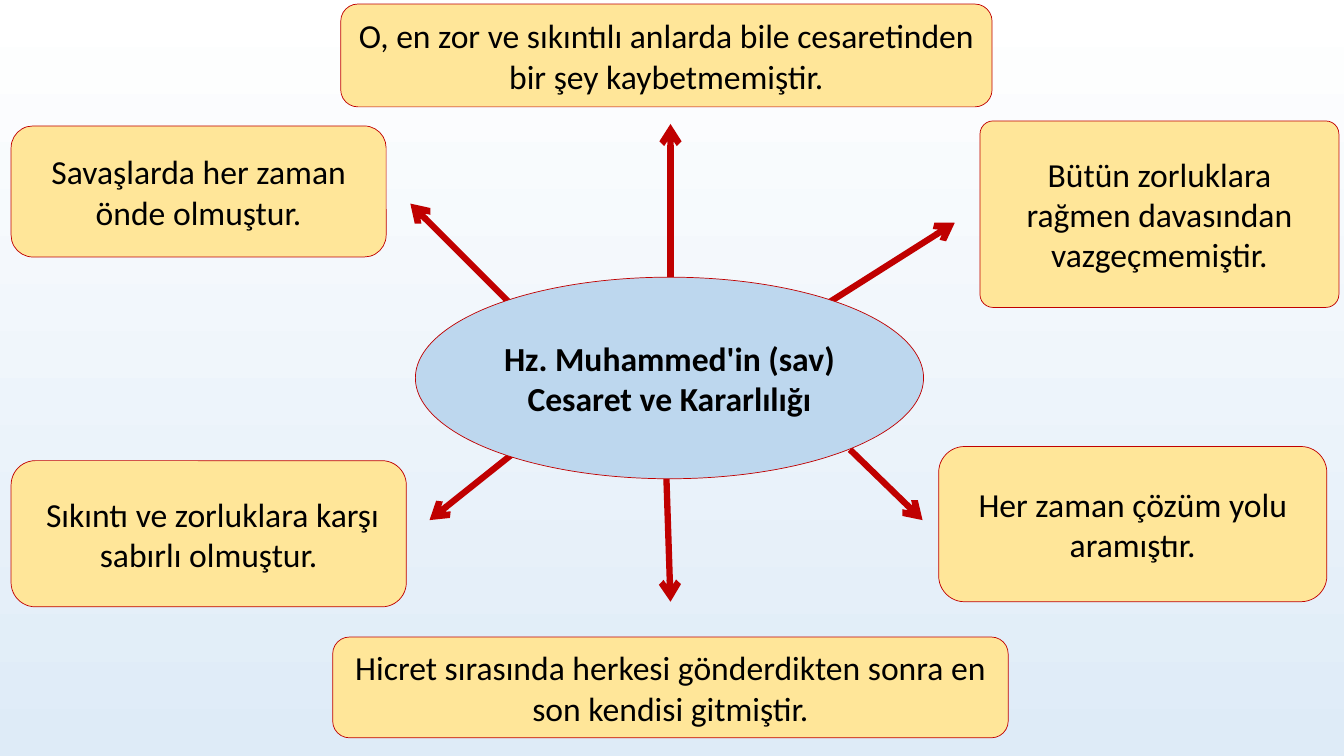
from lxml import etree
from pptx import Presentation
from pptx.dml.color import RGBColor
from pptx.enum.shapes import MSO_CONNECTOR, MSO_SHAPE
from pptx.enum.text import MSO_ANCHOR, PP_ALIGN
from pptx.oxml.ns import qn
from pptx.util import Emu, Pt

ROUND, OVAL = MSO_SHAPE.ROUNDED_RECTANGLE, MSO_SHAPE.OVAL
STRAIGHT = MSO_CONNECTOR.STRAIGHT
MIDDLE, CENTER = MSO_ANCHOR.MIDDLE, PP_ALIGN.CENTER
SCALE = 9144  # EMU per px, 100 px to the inch

TRAITS = [
    ((11, 125, 372, 130), "Savaşlarda her zaman önde olmuştur.", None),
    ((338, 4, 646, 102),
     "O, en zor ve sıkıntılı anlarda bile cesaretinden bir şey kaybetmemiştir.", None),
    ((972, 120, 356, 185), "Bütün zorluklara rağmen davasından vazgeçmemiştir.", 0.07),
    ((11, 457, 392, 145), " Sıkıntı ve zorluklara karşı sabırlı olmuştur.", None),
    ((330, 632, 670, 100),
     "Hicret sırasında herkesi gönderdikten sonra en son kendisi gitmiştir.", None),
    ((931, 443, 385, 154), "Her zaman çözüm yolu aramıştır.", None),
]
ARROWS = [
    (665, 275, 665, 123),
    (816, 304, 947, 221),
    (661, 475, 665, 597),
    (509, 304, 407, 202),
    (843, 446, 915, 516),
    (520, 441, 426, 516),
]


def px(*values):
    return [Emu(v * SCALE) for v in values]


def color(code):
    return RGBColor.from_string(code)


def write(frame, text, size=24, font="Calibri", ink="000000", bold=False):
    frame.word_wrap = True
    frame.vertical_anchor = MIDDLE
    para = frame.paragraphs[0]
    para.alignment = CENTER
    run = para.add_run()
    run.text = text
    run.font.size, run.font.name, run.font.bold = Pt(size), font, bold
    run.font.color.rgb = color(ink)


class Board:
    red, cream, blue = "C00000", "FFE699", "BDD7EE"

    def __init__(self, slide):
        self.slide = slide

    def shade(self, top, bottom):
        fill = self.slide.background.fill
        fill.gradient()
        fill.gradient_angle = 270
        for stop, code in zip(fill.gradient_stops, (top, bottom)):
            stop.color.rgb = color(code)

    def box(self, kind, area, text, fill, bend=None, bold=False):
        shape = self.slide.shapes.add_shape(kind, *px(*area))
        shape.shadow.inherit = False
        shape.fill.solid()
        shape.fill.fore_color.rgb = color(fill)
        shape.line.color.rgb = color(self.red)
        shape.line.width = Pt(0.5)
        if bend is not None:
            shape.adjustments[0] = bend
        write(shape.text_frame, text, bold=bold)

    def arrow(self, ends):
        link = self.slide.shapes.add_connector(STRAIGHT, *px(*ends))
        link.line.color.rgb = color(self.red)
        link.line.width = Pt(4.5)
        props = link.line._get_or_add_ln()
        etree.SubElement(props, qn("a:tailEnd"), type="arrow")
        etree.SubElement(link._element.spPr, qn("a:effectLst"))


def main():
    deck = Presentation()
    deck.slide_width, deck.slide_height = px(1333, 750)
    board = Board(deck.slides.add_slide(deck.slide_layouts[6]))
    board.shade("FFFFFF", "DEEBF7")

    # Traits around the centre
    for area, text, bend in TRAITS:
        board.box(ROUND, area, text, board.cream, bend)

    # Arrows towards the traits
    for ends in ARROWS:
        board.arrow(ends)

    # Central theme
    board.box(OVAL, (412, 275, 504, 200),
              "Hz. Muhammed'in (sav) Cesaret ve Kararlılığı", board.blue, bold=True)

    deck.save("out.pptx")


if __name__ == "__main__":
    main()
